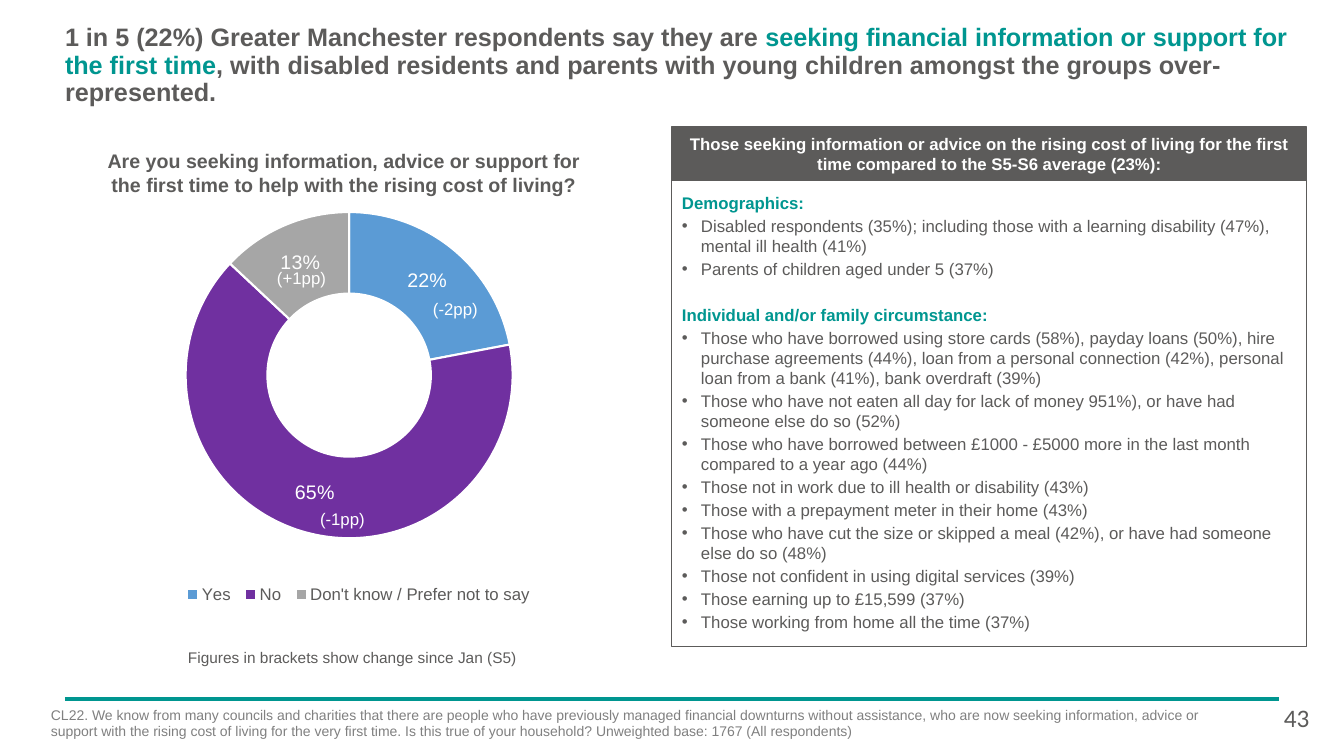
from lxml.etree import SubElement
from pptx import Presentation
from pptx.chart.data import CategoryChartData
from pptx.dml.color import RGBColor
from pptx.enum.chart import XL_CHART_TYPE, XL_LEGEND_POSITION
from pptx.enum.shapes import MSO_CONNECTOR, MSO_SHAPE
from pptx.enum.text import MSO_ANCHOR, MSO_AUTO_SIZE, PP_ALIGN
from pptx.oxml.ns import qn
from pptx.util import Emu, Pt

GREY = RGBColor(0x5C, 0x5B, 0x5A)
TEAL = RGBColor(0x00, 0x96, 0x90)
WHITE = RGBColor(0xFF, 0xFF, 0xFF)
NOTE_GREY = RGBColor(0x80, 0x80, 0x80)
BLUE = RGBColor(0x5B, 0x9B, 0xD5)
PURPLE = RGBColor(0x70, 0x30, 0xA0)
LIGHT_GREY = RGBColor(0xA6, 0xA6, 0xA6)

ANSWERS = [("Yes", 0.22, BLUE), ("No", 0.65, PURPLE),
           ("Don't know / Prefer not to say", 0.13, LIGHT_GREY)]

CHANGES = [("(+1pp)", 267, 263), ("(-2pp)", 423, 294), ("(-1pp)", 310, 504)]

GROUPS = [
    ("Demographics:", [
        "Disabled respondents (35%); including those with a learning disability (47%), "
        "mental ill health (41%)",
        "Parents of children aged under 5 (37%)",
    ]),
    ("Individual and/or family circumstance:", [
        "Those who have borrowed using store cards (58%), payday loans (50%), hire purchase "
        "agreements (44%), loan from a personal connection (42%), personal loan from a bank "
        "(41%), bank overdraft (39%)",
        "Those who have not eaten all day for lack of money 951%), or have had someone else "
        "do so (52%)",
        "Those who have borrowed between £1000 - £5000 more in the last month compared to a "
        "year ago (44%)",
        "Those not in work due to ill health or disability (43%)",
        "Those with a prepayment meter in their home (43%)",
        "Those who have cut the size or skipped a meal (42%), or have had someone else do "
        "so (48%)",
        "Those not confident in using digital services (39%)",
        "Those earning up to £15,599 (37%)",
        "Those working from home all the time (37%)",
    ]),
]


def px(*lengths):
    return [Emu(round(length * 914400 / 100.8)) for length in lengths]


class SlideBuilder:
    font = "Arial"

    def __init__(self, deck):
        self.page = deck.slides.add_slide(deck.slide_layouts[5])

    def span(self, para, text, size, color, bold=False, font=None):
        span = para.add_run()
        span.text = text
        span.font.name = font or self.font
        span.font.size = Pt(size)
        span.font.bold = bold
        span.font.color.rgb = color

    def frame(self, box, insets, wrap=True, anchor=MSO_ANCHOR.TOP):
        frame = box.text_frame
        frame.auto_size = MSO_AUTO_SIZE.NONE
        frame.word_wrap = wrap
        frame.vertical_anchor = anchor
        (frame.margin_left, frame.margin_top,
         frame.margin_right, frame.margin_bottom) = px(*insets)
        return frame

    def title(self, place, parts):
        box = self.page.shapes.title
        box.left, box.top, box.width, box.height = px(*place)
        para = self.frame(box, (0, 0, 0, 0)).paragraphs[0]
        para.alignment = PP_ALIGN.LEFT
        para.line_spacing = 0.9
        for text, color in parts:
            self.span(para, text, 18, color, bold=True)

    def text(self, place, text, size, color, bold=False, align=PP_ALIGN.LEFT,
             insets=(10, 5, 10, 5), wrap=True, font=None):
        box = self.page.shapes.add_textbox(*px(*place))
        para = self.frame(box, insets, wrap).paragraphs[0]
        para.alignment = align
        self.span(para, text, size, color, bold, font)

    def rectangle(self, place, fill=None):
        box = self.page.shapes.add_shape(MSO_SHAPE.RECTANGLE, *px(*place))
        box.shadow.inherit = False
        if fill is None:
            box.fill.background()
        else:
            box.fill.solid()
            box.fill.fore_color.rgb = fill
        box.line.color.rgb = GREY
        box.line.width = Pt(0.75)
        return box

    def header(self, place, text):
        box = self.rectangle(place, GREY)
        para = self.frame(box, (10, 5, 10, 5), anchor=MSO_ANCHOR.MIDDLE).paragraphs[0]
        para.alignment = PP_ALIGN.CENTER
        self.span(para, text, 12, WHITE, bold=True)

    def bullet(self, para):
        indent = px(19)[0]
        properties = para._p.get_or_add_pPr()
        properties.set("marL", str(indent))
        properties.set("indent", str(-indent))
        SubElement(properties, qn("a:buFont"), typeface=self.font)
        SubElement(properties, qn("a:buChar"), char="•")

    def grouped_list(self, place, groups):
        frame = self.frame(self.rectangle(place), (10, 12, 10, 5))
        for number, (heading, items) in enumerate(groups):
            para = frame.add_paragraph() if number else frame.paragraphs[0]
            para.alignment = PP_ALIGN.LEFT
            para.space_after = Pt(2)
            if number:
                para.space_before = Pt(16)
            self.span(para, heading, 12, TEAL, bold=True)
            for item in items:
                para = frame.add_paragraph()
                self.bullet(para)
                para.alignment = PP_ALIGN.LEFT
                para.space_after = Pt(2)
                self.span(para, item, 12, GREY)

    def line(self, x1, y1, x2, y2, color, width):
        line = self.page.shapes.add_connector(MSO_CONNECTOR.STRAIGHT, *px(x1, y1, x2, y2))
        line.line.color.rgb = color
        line.line.width = Pt(width)
        SubElement(line._element.spPr, qn("a:effectLst"))

    def layout(self, element, x, y, w, h, inner=False):
        for old in element.findall(qn("c:layout")):
            element.remove(old)
        layout = element.makeelement(qn("c:layout"), {})
        manual = SubElement(layout, qn("c:manualLayout"))
        if inner:
            SubElement(manual, qn("c:layoutTarget"), val="inner")
        for mode in ("xMode", "yMode"):
            SubElement(manual, qn(f"c:{mode}"), val="edge")
        for name, value in (("x", x), ("y", y), ("w", w), ("h", h)):
            SubElement(manual, qn(f"c:{name}"), val=str(value))
        element.insert(0 if inner else 1, layout)

    def doughnut(self, place, answers):
        data = CategoryChartData(number_format="0%")
        data.categories = [name for name, _, _ in answers]
        data.add_series("Series 1", [value for _, value, _ in answers])
        chart = self.page.shapes.add_chart(XL_CHART_TYPE.DOUGHNUT, *px(*place), data).chart
        chart.has_title = False
        chart.font.name = self.font
        chart.font.size = Pt(10)

        # Rings and labels
        plot = chart.plots[0]
        plot.vary_by_categories = True
        for index, (_, _, color) in enumerate(answers):
            point = plot.series[0].points[index]
            point.format.fill.solid()
            point.format.fill.fore_color.rgb = color
            point.format.line.color.rgb = WHITE
            point.format.line.width = Pt(1.5)
        plot.has_data_labels = True
        labels = plot.data_labels
        labels.show_value = True
        labels.show_percentage = False
        labels.number_format = "0%"
        labels.number_format_is_linked = False
        labels.font.name = self.font
        labels.font.size = Pt(14)
        labels.font.color.rgb = WHITE
        area = chart._chartSpace.chart.plotArea
        area.find(".//" + qn("c:holeSize")).set("val", "55")
        self.layout(area, 0.14, 0, 0.68, 0.75, inner=True)

        # Legend
        chart.has_legend = True
        legend = chart.legend
        legend.position = XL_LEGEND_POSITION.BOTTOM
        legend.include_in_layout = False
        legend.font.name = self.font
        legend.font.size = Pt(12)
        legend.font.color.rgb = GREY
        self.layout(legend._element, 0.13, 0.84, 0.74, 0.08)


def main():
    deck = Presentation()
    deck.slide_width, deck.slide_height = px(1344, 756)
    slide = SlideBuilder(deck)

    # Title and footer line
    slide.line(65, 699, 1279, 699, TEAL, 3)
    slide.title((65, 25, 1226, 88), [
        ("1 in 5 (22%) Greater Manchester respondents say they are ", GREY),
        ("seeking financial information or support for the first time", TEAL),
        (", with disabled residents and parents with young children amongst the groups "
         "over-represented.", GREY)])

    # Question, chart and changes
    slide.text((100, 149, 488, 47),
               "Are you seeking information, advice or support for the first time to help "
               "with the rising cost of living?",
               14, GREY, bold=True, align=PP_ALIGN.CENTER, insets=(0, 0, 0, 0))
    slide.doughnut((115, 211, 488, 436), ANSWERS)
    slide.text((169, 648, 367, 19), "Figures in brackets show change since Jan (S5)",
               11, GREY, align=PP_ALIGN.CENTER, insets=(0, 0, 0, 0))
    for change, left, top in CHANGES:
        slide.text((left, top, 68, 30), change, 12, WHITE, wrap=False)

    # Over-represented groups
    slide.header((672, 127, 635, 54),
                 "Those seeking information or advice on the rising cost of living for the "
                 "first time compared to the S5-S6 average (23%):")
    slide.grouped_list((672, 181, 635, 466), GROUPS)

    # Footnote and page number
    slide.text((41, 701, 1208, 56),
               "CL22. We know from many councils and charities that there are people who have "
               "previously managed financial downturns without assistance, who are now seeking "
               "information, advice or support with the rising cost of living for the very "
               "first time. Is this true of your household? Unweighted base: 1767 (All "
               "respondents)", 10, NOTE_GREY)
    slide.text((1274, 697, 53, 40), "43", 18, GREY, font="Calibri")
    deck.save("out.pptx")


if __name__ == "__main__":
    main()
